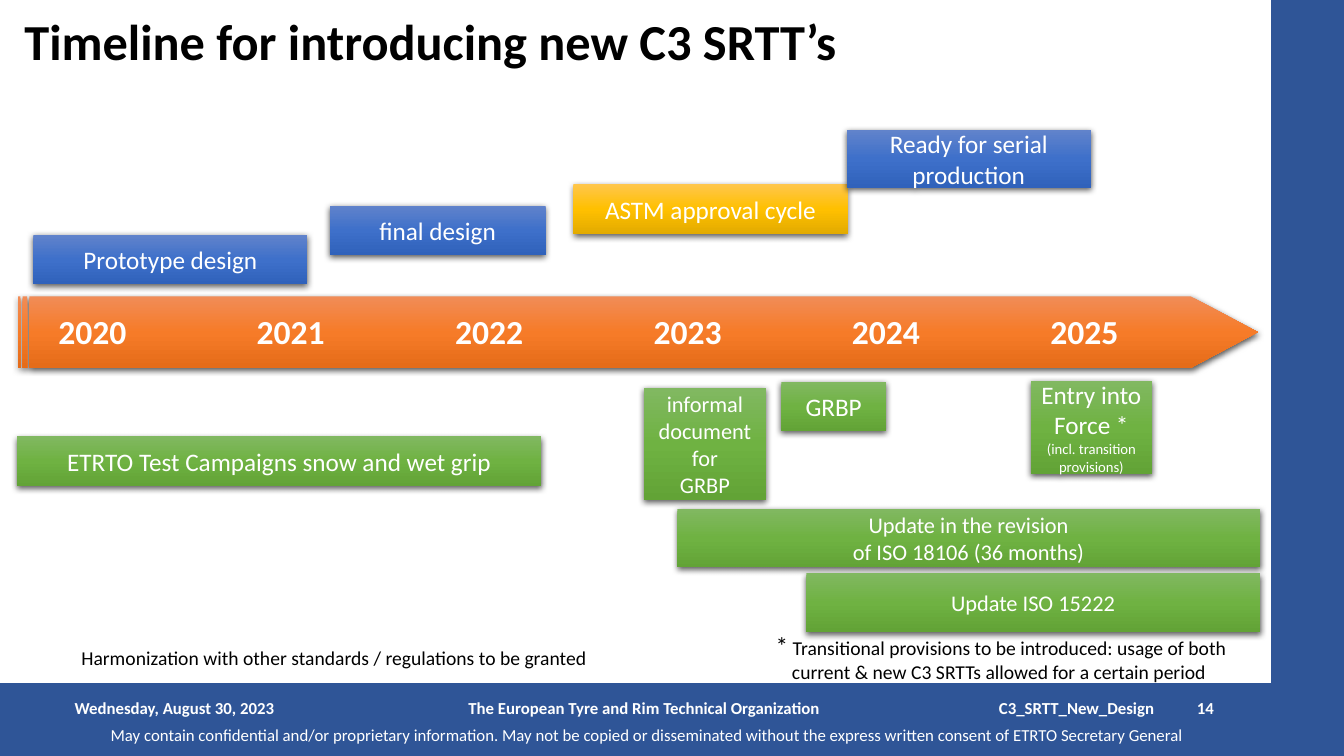
from lxml.etree import SubElement
from pptx import Presentation
from pptx.dml.color import RGBColor
from pptx.enum.shapes import MSO_SHAPE
from pptx.enum.text import MSO_ANCHOR, PP_ALIGN
from pptx.oxml import parse_xml
from pptx.oxml.ns import nsdecls, qn
from pptx.util import Cm, Pt

COLORS = {"navy": "2F5597", "white": "FFFFFF", "black": "000000"}
GRADIENTS = {
    "orange": ("F18C57", "F67B28", "E56C19"),
    "green": ("81B861", "6FB242", "62A336"),
    "yellow": ("FFC64B", "FFC000", "E3AB00"),
    "blue": ("6183CB", "3E70CA", "3062BB"),
}


def write(shape, lines, size=18, color="white", bold=False,
          align=PP_ALIGN.LEFT, anchor=MSO_ANCHOR.MIDDLE, wrap=True):
    """Write one paragraph per line; a line is a list of (text, size) or a string."""
    frame = shape.text_frame
    frame.word_wrap = wrap
    frame.vertical_anchor = anchor
    for number, line in enumerate(lines):
        paragraph = frame.paragraphs[0] if number == 0 else frame.add_paragraph()
        paragraph.alignment = align
        for text, points in [(line, size)] if isinstance(line, str) else line:
            run = paragraph.add_run()
            run.text = text
            run.font.name = "Calibri"
            run.font.size = Pt(points)
            run.font.bold = bold
            run.font.color.rgb = RGBColor.from_string(COLORS[color])
    return frame


def add_glossy(kind, box, gradient):
    """Add a borderless shape with a vertical gradient and a soft shadow."""
    shape = slide.shapes.add_shape(kind, *map(Cm, box))
    shape.line.fill.background()
    shape.shadow.inherit = False
    stops = "".join(
        f'<a:gs pos="{i * 50000}"><a:srgbClr val="{tone}"/></a:gs>'
        for i, tone in enumerate(GRADIENTS[gradient]))
    properties = shape.element.spPr
    properties.find(qn("a:prstGeom")).addnext(parse_xml(
        f'<a:gradFill {nsdecls("a")} rotWithShape="1"><a:gsLst>{stops}</a:gsLst>'
        '<a:lin ang="5400000" scaled="0"/></a:gradFill>'))
    shadow = SubElement(properties.find(qn("a:effectLst")), qn("a:outerShdw"),
                        blurRad="57150", dist="19050", dir="5400000",
                        algn="ctr", rotWithShape="0")
    shade = SubElement(shadow, qn("a:srgbClr"), val=COLORS["black"])
    SubElement(shade, qn("a:alpha"), val="63000")
    return shape


prs = Presentation()
prs.slide_width, prs.slide_height = Cm(33.87), Cm(19.05)
slide = prs.slides.add_slide(prs.slide_layouts[5])

# Title
title = slide.shapes.title
title.left, title.top, title.width, title.height = map(Cm, (0.36, 0.13, 25.4, 1.8))
write(title, ["Timeline for introducing new C3 SRTT’s"], size=36,
      color="black", bold=True, anchor=MSO_ANCHOR.TOP)

# Navy frame at the bottom and right
for box in [(0, 17.22, 33.83, 1.83), (32.05, 0, 1.82, 19.05)]:
    band = slide.shapes.add_shape(MSO_SHAPE.RECTANGLE, *map(Cm, box))
    band.shadow.inherit = False
    band.fill.solid()
    band.fill.fore_color.rgb = RGBColor.from_string(COLORS["navy"])
    band.line.color.rgb = RGBColor.from_string(COLORS["navy"])
    band.line.width = Pt(1)

# Footer
disclaimer = slide.shapes.add_textbox(Cm(2.54), Cm(18.31), Cm(28.78), Cm(0.43))
write(disclaimer, ["May contain confidential and/or proprietary information. "
                   "May not be copied or disseminated without the express "
                   "written consent of ETRTO Secretary General"], size=12)
for text, left, width, align in [
    ("Wednesday, August 30, 2023", 1.63, 7.62, PP_ALIGN.LEFT),
    ("The European Tyre and Rim Technical Organization", 10.52, 11.43, PP_ALIGN.CENTER),
    ("C3_SRTT_New_Design", 21.72, 7.62, PP_ALIGN.RIGHT),
    ("14", 29.34, 1.5, PP_ALIGN.RIGHT),
]:
    footer = slide.shapes.add_textbox(Cm(left), Cm(17.32), Cm(width), Cm(1.02))
    write(footer, [text], size=12, bold=True, align=align)

# Time arrow with years
arrow = add_glossy(MSO_SHAPE.STRIPED_RIGHT_ARROW, (0.46, 7.47, 31.24, 1.8), "orange")
arrow.adjustments[0] = 1
arrow.adjustments[1] = 0.94
for i in range(6):
    year = slide.shapes.add_textbox(Cm(1.22 + 5 * i), Cm(7.7), Cm(2.24), Cm(1.27))
    write(year, [str(2020 + i)], size=24, bold=True, anchor=MSO_ANCHOR.TOP, wrap=False)

# Milestones
for lines, size, gradient, box in [
    (["ETRTO Test Campaigns snow and wet grip"], 18, "green", (0.43, 11, 13.21, 1.24)),
    (["ASTM approval cycle"], 18, "yellow", (14.45, 4.65, 6.91, 1.24)),
    (["Entry into Force *", [("(incl. transition provisions)", 10.5)]], 18, "green",
     (25.98, 9.6, 3.05, 2.34)),
    (["Ready for serial production"], 18, "blue", (21.34, 3.28, 6.15, 1.45)),
    (["Prototype design"], 18, "blue", (0.84, 5.92, 6.91, 1.24)),
    (["final design"], 18, "blue", (8.31, 5.18, 5.44, 1.24)),
    (["GRBP"], 18, "green", (19.69, 9.63, 2.64, 1.24)),
    (["informal document", "for", "GRBP"], 16, "green", (16.23, 9.78, 3.07, 2.82)),
    (["Update in the revision", "of ISO 18106 (36 months)"], 16, "green",
     (17.07, 12.83, 14.68, 1.47)),
    (["Update ISO 15222"], 16, "green", (20.32, 14.45, 11.43, 1.47)),
]:
    milestone = add_glossy(MSO_SHAPE.RECTANGLE, box, gradient)
    write(milestone, lines, size=size, align=PP_ALIGN.CENTER)

# Notes below the timeline
footnote = slide.shapes.add_textbox(Cm(19.3), Cm(15.75), Cm(12.14), Cm(1.63))
footnote_frame = write(
    footnote,
    [[("*", 18), (" Transitional provisions to be introduced: usage of both", 14)],
     "current & new C3 SRTTs allowed for a certain period"],
    size=14, color="black", anchor=MSO_ANCHOR.TOP)
for paragraph, indent in zip(footnote_frame.paragraphs, (-0.41, 0)):
    layout = paragraph._p.get_or_add_pPr()
    layout.set("marL", str(Cm(0.41)))
    layout.set("indent", str(Cm(indent)))

harmonization = slide.shapes.add_textbox(Cm(1.8), Cm(16.15), Cm(17.2), Cm(0.86))
write(harmonization, ["Harmonization with other standards / regulations to be granted"],
      size=14, color="black", anchor=MSO_ANCHOR.TOP)

prs.save("out.pptx")
